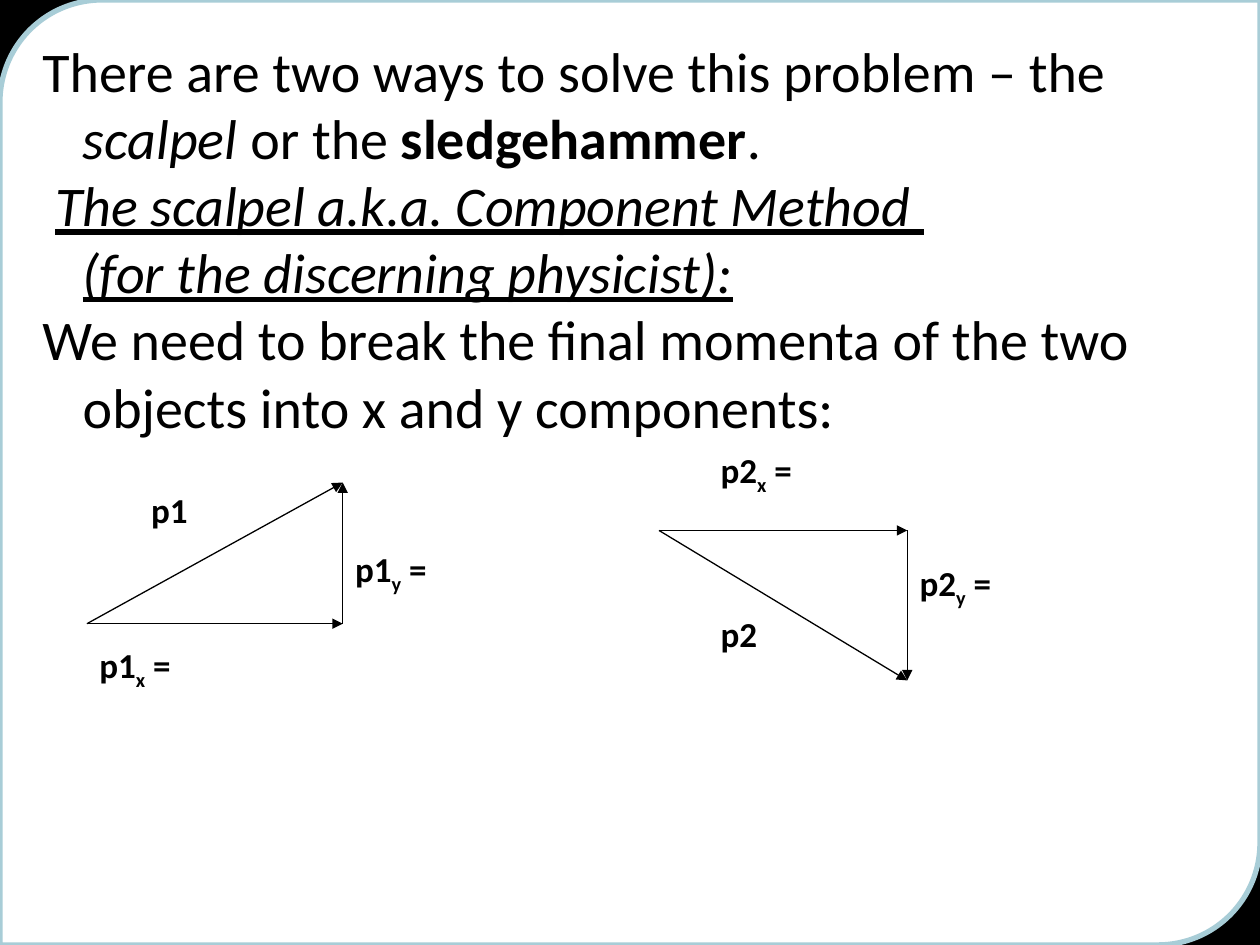
from lxml import etree
from pptx import Presentation
from pptx.dml.color import RGBColor
from pptx.enum.shapes import MSO_CONNECTOR
from pptx.enum.text import MSO_ANCHOR, MSO_AUTO_SIZE
from pptx.oxml import parse_xml
from pptx.oxml.ns import nsdecls, qn
from pptx.util import Inches, Pt


def rgb(value):
    return RGBColor.from_string(value)


def add_run(p, text, size, bold=False, italic=False, underline=False):
    r = p.add_run()
    r.text = text
    r.font.name = "Calibri"
    r.font.size = Pt(size)
    r.font.bold = bold
    r.font.italic = italic
    r.font.underline = underline
    r.font.color.rgb = rgb("000000")
    return r


prs = Presentation()
prs.slide_width = Inches(10)
prs.slide_height = Inches(7.5)
s = prs.slides.add_slide(prs.slide_layouts[1])
s.background.fill.solid()
s.background.fill.fore_color.rgb = rgb("000000")
title = s.shapes.title.element
title.getparent().remove(title)

body = s.placeholders[1]
body.left, body.top = Inches(0), Inches(0)
body.width, body.height = Inches(10), Inches(7.5)
body.element.spPr.append(parse_xml(
    f'<a:prstGeom {nsdecls("a")} prst="round2DiagRect"><a:avLst>'
    '<a:gd name="adj1" fmla="val 10800"/><a:gd name="adj2" fmla="val 0"/>'
    '</a:avLst></a:prstGeom>'))
body.fill.solid()
body.fill.fore_color.rgb = rgb("FFFFFF")
body.line.color.rgb = rgb("A8CDD7")
body.line.width = Pt(3)

tf = body.text_frame
tf.word_wrap = True
tf.auto_size = MSO_AUTO_SIZE.NONE
tf.vertical_anchor = MSO_ANCHOR.TOP
heading = {"italic": True, "underline": True}
paragraphs = [
    [("There are two ways to solve this problem – the ", {}),
     ("scalpel ", {"italic": True}),
     ("or the ", {}),
     ("sledgehammer", {"bold": True}),
     (".", {})],
    [(" ", {}),
     ("The scalpel a.k.a. Component Method ", heading),
     ("\n", {}),
     ("(for the discerning physicist):", heading)],
    [("We need to break the final momenta of the two objects into x and y components:", {})],
]
for i, runs in enumerate(paragraphs):
    p = tf.paragraphs[0] if i == 0 else tf.add_paragraph()
    p.space_before = Pt(0)
    pPr = p._p.get_or_add_pPr()
    pPr.set("marL", str(Inches(0.32)))
    pPr.set("indent", str(Inches(-0.32)))
    etree.SubElement(pPr, qn("a:buNone"))
    for text, style in runs:
        if text == "\n":
            p.add_line_break()
        else:
            add_run(p, text, 32, **style)

triangles = [
    ("p1", (0.69, 4.95), (2.72, 4.95), (2.72, 3.83),
     [("", 1.1, 3.83, 0.81, 0.56), ("x", 0.69, 5.06, 1.21, 0.56), ("y", 2.72, 4.3, 1.42, 0.56)]),
    ("p2", (5.23, 4.21), (7.2, 4.21), (7.2, 5.4),
     [("", 5.62, 4.81, 0.79, 0.6), ("y", 7.2, 4.41, 1.38, 0.6), ("x", 5.62, 3.51, 1.38, 0.6)]),
]
for name, start, corner, tip, labels in triangles:
    group = s.shapes.add_group_shape()
    for a, b in [(start, tip), (start, corner), (corner, tip)]:
        arrow = group.shapes.add_connector(
            MSO_CONNECTOR.STRAIGHT, *[Inches(v) for v in a + b])
        arrow.line.color.rgb = rgb("000000")
        arrow.line.width = Pt(0.75)
        etree.SubElement(arrow.line._get_or_add_ln(), qn("a:tailEnd"), type="triangle")
        etree.SubElement(arrow._element.spPr, qn("a:effectLst"))
    for axis, *box in labels:
        label = group.shapes.add_textbox(*[Inches(v) for v in box])
        label.text_frame.word_wrap = True
        p = label.text_frame.paragraphs[0]
        p.space_after = Pt(10)
        add_run(p, name, 20, bold=True)
        if axis:
            r = add_run(p, axis, 20, bold=True)
            r.font._element.set("baseline", "-25000")
            add_run(p, " =", 20, bold=True)

prs.save("out.pptx")
